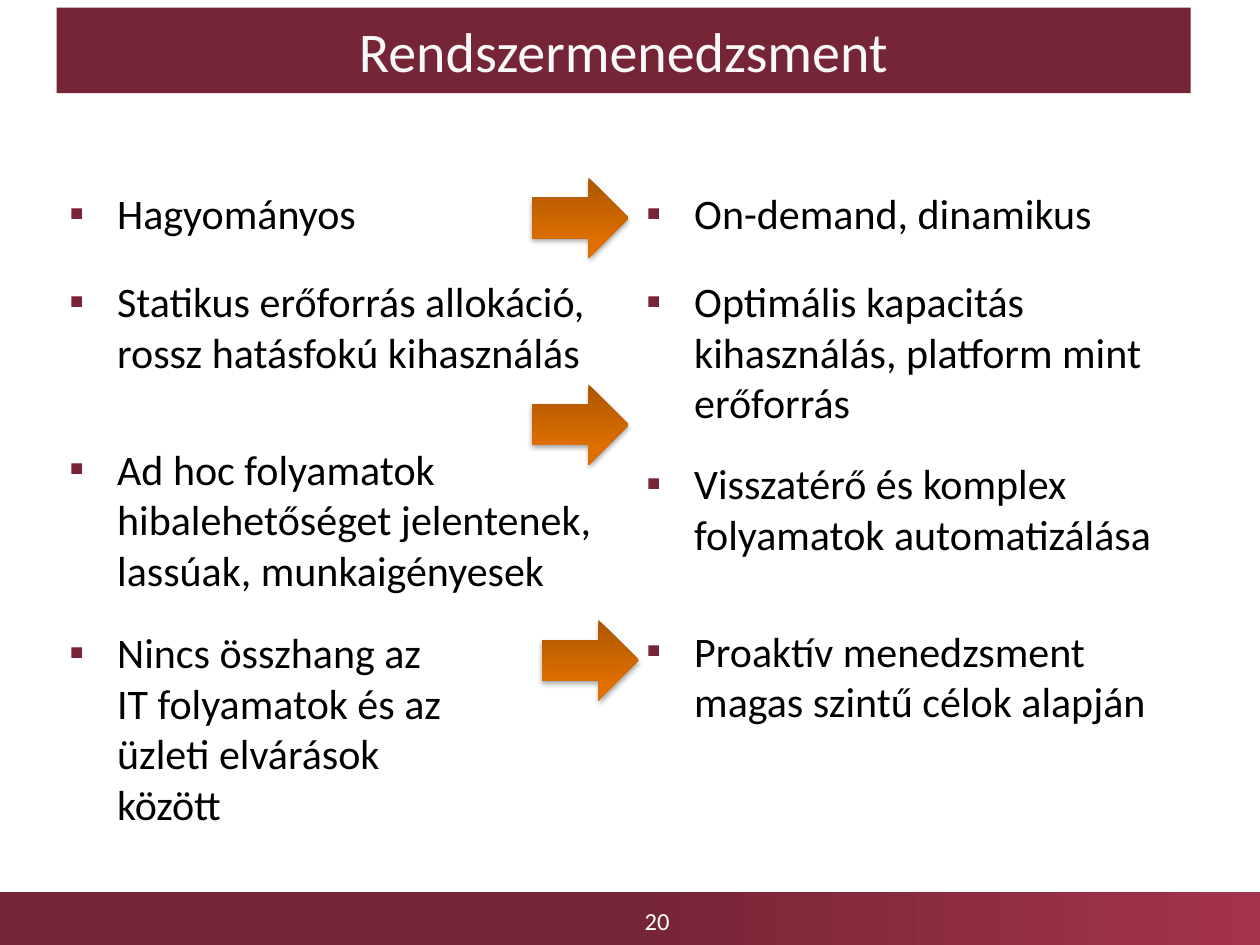
from lxml import etree
from pptx import Presentation
from pptx.dml.color import RGBColor
from pptx.enum.shapes import MSO_SHAPE
from pptx.enum.text import MSO_ANCHOR, MSO_AUTO_SIZE, PP_ALIGN
from pptx.oxml import parse_xml
from pptx.oxml.ns import nsdecls, qn
from pptx.util import Inches, Pt

RECTANGLE, RIGHT_ARROW = MSO_SHAPE.RECTANGLE, MSO_SHAPE.RIGHT_ARROW
TOP, MIDDLE = MSO_ANCHOR.TOP, MSO_ANCHOR.MIDDLE
CENTER, LEFT = PP_ALIGN.CENTER, PP_ALIGN.LEFT
NO_AUTOFIT = MSO_AUTO_SIZE.NONE
FONT = "Calibri"
COLORS = {"wine": "762536", "light wine": "A3334B", "title": "F8F8F8",
          "text": "000000", "number": "FFFFFF", "shadow": "000000",
          "dark orange": "AC5600", "orange": "DF6F00", "light orange": "E07000"}


def add_text(paragraph, text, size, color):
    """Add a run for each line, with line breaks between them."""
    for index, line in enumerate(text.split("\n")):
        if index:
            paragraph.add_line_break()
        run = paragraph.add_run()
        run.text = line
        run.font.name = FONT
        run.font.size = Pt(size)
        run.font.bold = False
        run.font.color.rgb = RGBColor.from_string(COLORS[color])


def fill_gradient(shape, stops, angle):
    """Fill with (percent, color) stops; the angle runs counter-clockwise."""
    shape.fill.gradient()
    shape.fill.gradient_angle = angle
    stop_list = shape._element.spPr.find(qn("a:gradFill")).find(qn("a:gsLst"))
    for stop in list(stop_list):
        stop_list.remove(stop)
    for percent, color in stops:
        stop = etree.SubElement(stop_list, qn("a:gs"), pos=str(percent * 1000))
        etree.SubElement(stop, qn("a:srgbClr"), val=COLORS[color])
    shape.line.fill.background()


presentation = Presentation()
presentation.slide_width = Inches(10)
presentation.slide_height = Inches(7.5)
slide = presentation.slides.add_slide(presentation.slide_layouts[4])

# Footer bar and slide number
footer = slide.shapes.add_shape(RECTANGLE, Inches(0), Inches(7.08), Inches(10), Inches(0.42))
footer.shadow.inherit = False
fill_gradient(footer, [(0, "wine"), (50, "wine"), (100, "light wine")], 0)

number = slide.shapes.add_textbox(Inches(3.59), Inches(7.11), Inches(3.25), Inches(0.39))
number.text_frame.word_wrap = True
number.text_frame.vertical_anchor = MIDDLE
number.text_frame.paragraphs[0].alignment = CENTER
add_text(number.text_frame.paragraphs[0], "20", 14, "number")

# Title band
title = slide.shapes.title
title.left, title.top, title.width, title.height = (
    Inches(0.45), Inches(0.06), Inches(9), Inches(0.68))
title.fill.solid()
title.fill.fore_color.rgb = RGBColor.from_string(COLORS["wine"])
title.text_frame.auto_size = NO_AUTOFIT
title.text_frame.vertical_anchor = MIDDLE
title.text_frame.paragraphs[0].alignment = CENTER
add_text(title.text_frame.paragraphs[0], "Rendszermenedzsment", 32, "title")

# Two compared columns: placeholder, place, (space before, text) items
lists = [
    (1, (0.45, 1.44, 4.55, 0.75), [(0, "Hagyományos")]),
    (2, (0.45, 2.14, 4.42, 4.82), [
        (0, "Statikus erőforrás allokáció, rossz hatásfokú kihasználás"),
        (38, "Ad hoc folyamatok hibalehetőséget jelentenek, lassúak, munkaigényesek"),
        (18.5, "Nincs összhang az\nIT folyamatok és az\nüzleti elvárások\nközött")]),
    (3, (5.03, 1.44, 4.81, 0.67), [(0, "On-demand, dinamikus")]),
    (4, (5.03, 2.14, 4.42, 4.05), [
        (0, "Optimális kapacitás kihasználás, platform mint erőforrás"),
        (17.5, "Visszatérő és komplex folyamatok automatizálása"),
        (38, "Proaktív menedzsment magas szintű célok alapján")]),
]
for placeholder_index, place, items in lists:
    body = slide.placeholders[placeholder_index]
    body.left, body.top, body.width, body.height = [Inches(length) for length in place]
    frame = body.text_frame
    frame.auto_size = NO_AUTOFIT
    frame.vertical_anchor = TOP
    for index, (space, text) in enumerate(items):
        paragraph = frame.add_paragraph() if index else frame.paragraphs[0]
        properties = paragraph._p.get_or_add_pPr()
        properties.set("marL", str(Inches(0.38)))
        properties.set("indent", str(-Inches(0.38)))
        bullet_color = etree.SubElement(properties, qn("a:buClr"))
        etree.SubElement(bullet_color, qn("a:srgbClr"), val=COLORS["wine"])
        etree.SubElement(properties, qn("a:buFont"), typeface=FONT)
        etree.SubElement(properties, qn("a:buChar"), char="▪")
        paragraph.alignment = LEFT
        paragraph.space_before = Pt(space)
        add_text(paragraph, text, 24, "text")

# Arrows from the left column to the right one
for left, top in [(4.22, 1.41), (4.22, 3.05), (4.3, 4.92)]:
    arrow = slide.shapes.add_shape(
        RIGHT_ARROW, Inches(left), Inches(top), Inches(0.77), Inches(0.64))
    fill_gradient(arrow, [(0, "dark orange"), (80, "orange"), (100, "light orange")], 270)
    arrow._element.spPr.append(parse_xml(
        f'<a:effectLst {nsdecls("a")}>'
        f'<a:outerShdw blurRad="{Pt(3.1)}" dist="{Pt(1.8)}" dir="5400000" rotWithShape="0">'
        f'<a:srgbClr val="{COLORS["shadow"]}"><a:alpha val="35000"/></a:srgbClr>'
        '</a:outerShdw></a:effectLst>'))

presentation.save("out.pptx")
